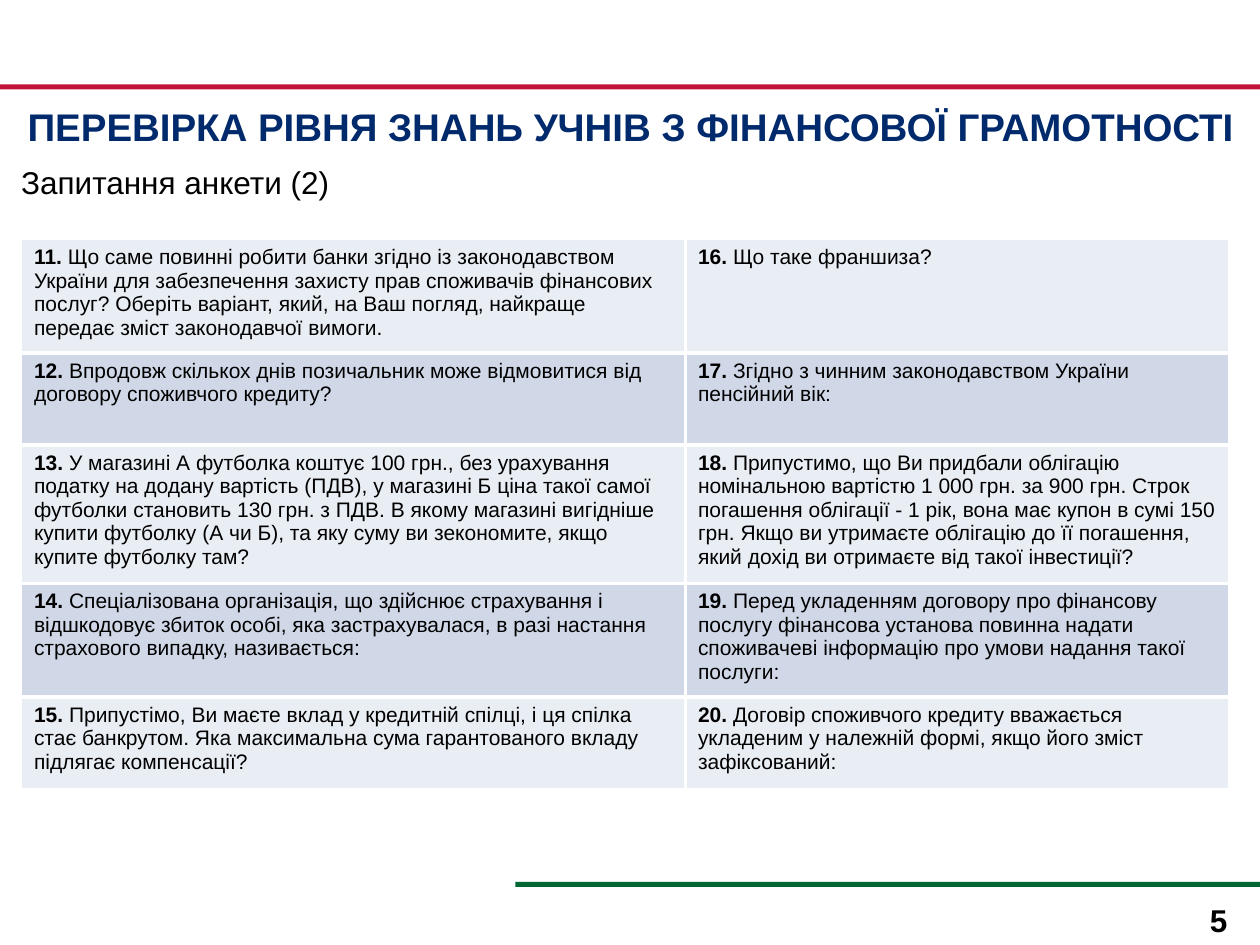
from lxml.etree import SubElement
from pptx import Presentation
from pptx.dml.color import RGBColor
from pptx.enum.shapes import MSO_SHAPE
from pptx.enum.text import PP_ALIGN
from pptx.oxml.ns import qn
from pptx.util import Inches, Pt

BLACK = RGBColor(0, 0, 0)
NAVY = RGBColor(0x00, 0x2A, 0x6C)
RED = RGBColor(0xC2, 0x11, 0x3A)
GREEN = RGBColor(0x00, 0x66, 0x33)
BANDS = [RGBColor(0xE9, 0xED, 0xF4), RGBColor(0xD0, 0xD8, 0xE8)]

TITLE = "ПЕРЕВІРКА РІВНЯ ЗНАНЬ УЧНІВ З ФІНАНСОВОЇ ГРАМОТНОСТІ"
SUBTITLE = "Запитання анкети (2)"
FIRST_NUMBER = 11
QUESTIONS = [
    "Що саме повинні робити банки згідно із законодавством України для забезпечення "
    "захисту прав споживачів фінансових послуг? Оберіть варіант, який, на Ваш погляд, "
    "найкраще передає зміст законодавчої вимоги.",
    "Впродовж скількох днів позичальник може відмовитися від договору споживчого кредиту?",
    "У магазині А футболка коштує 100 грн., без урахування податку на додану вартість "
    "(ПДВ), у магазині Б ціна такої самої футболки становить 130 грн. з ПДВ. В якому "
    "магазині вигідніше купити футболку (А чи Б), та яку суму ви зекономите, якщо "
    "купите футболку там?",
    "Спеціалізована організація, що здійснює страхування і відшкодовує збиток особі, "
    "яка застрахувалася, в разі настання страхового випадку, називається:",
    "Припустімо, Ви маєте вклад у кредитній спілці, і ця спілка стає банкрутом. Яка "
    "максимальна сума гарантованого вкладу підлягає компенсації?",
    "Що таке франшиза?",
    "Згідно з чинним законодавством України пенсійний вік:",
    "Припустимо, що Ви придбали облігацію номінальною вартістю 1 000 грн. за 900 грн. "
    "Строк погашення облігації - 1 рік, вона має купон в сумі 150 грн. Якщо ви "
    "утримаєте облігацію до її погашення, який дохід ви отримаєте від такої інвестиції?",
    "Перед укладенням договору про фінансову послугу фінансова установа повинна надати "
    "споживачеві інформацію про умови надання такої послуги:",
    "Договір споживчого кредиту вважається укладеним у належній формі, якщо його зміст "
    "зафіксований:",
]
COL_WIDTHS = [5.27, 4.31]
ROW_HEIGHTS = [0.9, 0.73, 1.1, 0.9, 0.73]


def add_run(p, text, size=12, bold=False, color=BLACK):
    r = p.add_run()
    r.text = text
    r.font.name = "Arial"
    r.font.size = Pt(size)
    r.font.bold = bold
    r.font.color.rgb = color


def add_text(s, text, box, align=PP_ALIGN.LEFT, **fmt):
    tf = s.shapes.add_textbox(*map(Inches, box)).text_frame
    tf.word_wrap = True
    tf.margin_top = Inches(0.07)
    p = tf.paragraphs[0]
    p.alignment = align
    add_run(p, text, **fmt)


def add_bar(s, box, color):
    bar = s.shapes.add_shape(MSO_SHAPE.RECTANGLE, *map(Inches, box))
    bar.shadow.inherit = False
    bar.fill.solid()
    bar.fill.fore_color.rgb = color
    bar.line.fill.background()


def set_borders(cell, widths):
    """Draw white cell borders; widths maps the sides L, R, T, B to points."""
    tcPr = cell._tc.get_or_add_tcPr()
    for i, side in enumerate("LRTB"):
        ln = SubElement(tcPr, qn(f"a:ln{side}"), w=str(Pt(widths[side])))
        fill = SubElement(ln, qn("a:solidFill"))
        SubElement(fill, qn("a:srgbClr"), val="FFFFFF")
        tcPr.insert(i, ln)


def add_questions(s, left, top):
    rows, cols = len(ROW_HEIGHTS), len(COL_WIDTHS)
    box = (left, top, sum(COL_WIDTHS), sum(ROW_HEIGHTS))
    table = s.shapes.add_table(rows, cols, *map(Inches, box)).table
    for col, width in zip(table.columns, COL_WIDTHS):
        col.width = Inches(width)
    for row, height in zip(table.rows, ROW_HEIGHTS):
        row.height = Inches(height)
    for n, question in enumerate(QUESTIONS):
        c, r = divmod(n, rows)
        cell = table.cell(r, c)
        cell.fill.solid()
        cell.fill.fore_color.rgb = BANDS[r % 2]
        outer = {"L": c == 0, "R": c == cols - 1, "T": r == 0, "B": r == rows - 1}
        set_borders(cell, {side: 1 if edge else 2.25 for side, edge in outer.items()})
        p = cell.text_frame.paragraphs[0]
        add_run(p, f"{FIRST_NUMBER + n}. ", bold=True)
        add_run(p, question)


def main():
    prs = Presentation()
    prs.slide_width, prs.slide_height = Inches(10), Inches(7.5)
    s = prs.slides.add_slide(prs.slide_layouts[6])
    add_bar(s, (0, 0.67, 10, 0.04), RED)
    add_bar(s, (4.09, 7, 5.91, 0.04), GREEN)
    add_text(s, "5", (9.33, 7.08, 0.51, 0.33), PP_ALIGN.RIGHT, size=18, bold=True)
    add_questions(s, 0.17, 1.9)
    add_text(s, TITLE, (0, 0.75, 10.01, 0.58), PP_ALIGN.CENTER,
             size=22, bold=True, color=NAVY)
    add_text(s, SUBTITLE, (0.07, 1.22, 8.13, 0.4), size=18)
    prs.save("out.pptx")


if __name__ == "__main__":
    main()
